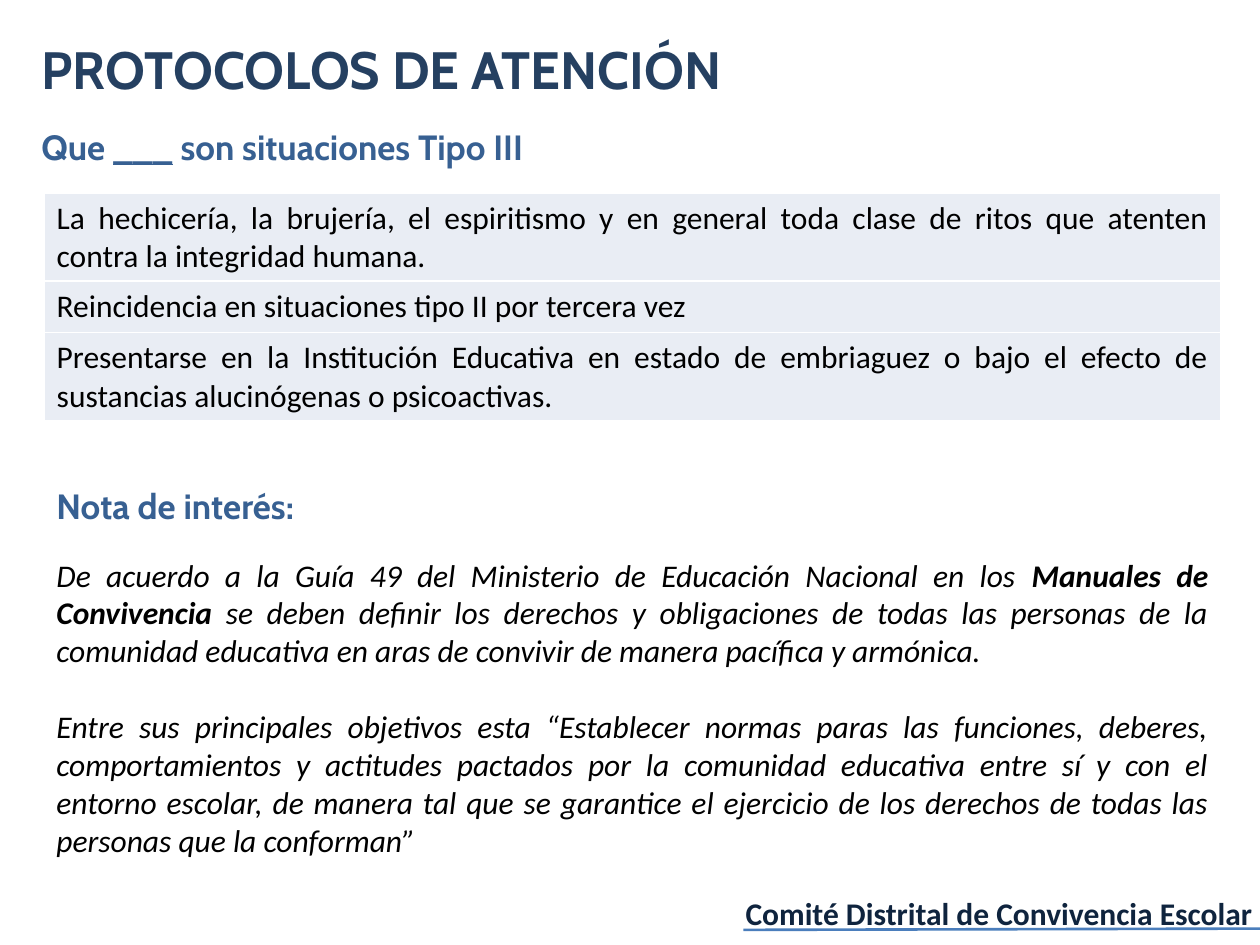
import pptx
import pptx.dml.color
import pptx.enum.shapes
import pptx.enum.text
import pptx.oxml
import pptx.oxml.ns
import pptx.util

Inches = pptx.util.Inches
Pt = pptx.util.Pt
RGBColor = pptx.dml.color.RGBColor
ALIGN = pptx.enum.text.PP_ALIGN

NAVY = RGBColor(0x25, 0x40, 0x61)
BLUE = RGBColor(0x37, 0x60, 0x92)
INK = RGBColor(0x0F, 0x24, 0x3E)
RULE = RGBColor(0x4B, 0x7E, 0xBC)
BAND = RGBColor(0xE9, 0xED, 0xF4)
BLACK = RGBColor(0, 0, 0)

SITUATIONS = [
    ("La hechicería, la brujería, el espiritismo y en general toda clase de ritos "
     "que atenten contra la integridad humana.", 0.69),
    ("Reincidencia en situaciones tipo II por tercera vez", 0.41),
    ("Presentarse en la Institución Educativa en estado de embriaguez o bajo el "
     "efecto de sustancias alucinógenas o psicoactivas.", 0.7),
]
NOTE = [
    [("De acuerdo a la Guía 49 del Ministerio de Educación Nacional en los ", {}),
     ("Manuales de Convivencia ", {"bold": True}),
     ("se deben definir los derechos y obligaciones de todas las personas de la "
      "comunidad educativa en aras de convivir de manera pacífica y armónica.", {})],
    [("Entre sus principales objetivos esta “Establecer normas paras las funciones, "
      "deberes, comportamientos y actitudes pactados por la comunidad educativa entre "
      "sí y con el entorno escolar, de manera tal que se garantice el ejercicio de los "
      "derechos de todas las personas que la conforman”", {})],
]


def write(frame, paragraphs, font="Calibri", size=18, color=BLACK, bold=False,
          italic=False, align=ALIGN.LEFT, gap=0, wrap=True):
    """Fill a text frame with paragraphs, each a string or a list of (text, overrides)."""
    frame.word_wrap = wrap
    for index, runs in enumerate(paragraphs):
        paragraph = frame.paragraphs[0] if index == 0 else frame.add_paragraph()
        paragraph.alignment = align
        if index:
            paragraph.space_before = Pt(gap)
        for text, overrides in [(runs, {})] if isinstance(runs, str) else runs:
            run = paragraph.add_run()
            run.text = text
            run.font.name = font
            run.font.size = Pt(size)
            run.font.color.rgb = color
            run.font.bold = overrides.get("bold", bold)
            run.font.italic = italic
            run.font.underline = overrides.get("underline", False)


def add_title(slide, left, top, width, height):
    """Place the slide heading in the title placeholder."""
    title = slide.shapes.title
    title.left, title.top, title.width, title.height = left, top, width, height
    title.text_frame.auto_size = pptx.enum.text.MSO_AUTO_SIZE.NONE
    title.text_frame.vertical_anchor = pptx.enum.text.MSO_ANCHOR.TOP
    write(title.text_frame, ["PROTOCOLOS DE ATENCIÓN"], font="Cabin", size=30,
          color=NAVY, bold=True)


def add_subheading(slide, runs, left, top, width, height):
    """Place a blue section heading."""
    box = slide.shapes.add_textbox(left, top, width, height)
    write(box.text_frame, [runs], font="Cabin", size=20, color=BLUE, bold=True)


def add_borders(cell):
    """Draw thin white borders round a table cell."""
    properties = cell._tc.get_or_add_tcPr()
    for side in ("lnL", "lnR", "lnT", "lnB"):
        properties.append(pptx.oxml.parse_xml(
            f'<a:{side} {pptx.oxml.ns.nsdecls("a")} w="12700"><a:solidFill>'
            f'<a:srgbClr val="FFFFFF"/></a:solidFill></a:{side}>'))


def add_situations(slide, left, top, width):
    """Place the one-column table of situations."""
    height = Inches(sum(row_height for _, row_height in SITUATIONS))
    table = slide.shapes.add_table(len(SITUATIONS), 1, left, top, width, height).table
    table.first_row = False
    table.horz_banding = False
    for row, (situation, row_height) in zip(table.rows, SITUATIONS):
        row.height = Inches(row_height)
        cell = row.cells[0]
        add_borders(cell)
        cell.fill.solid()
        cell.fill.fore_color.rgb = BAND
        write(cell.text_frame, [situation], align=ALIGN.JUSTIFY)


def add_note(slide, left, top, width, height):
    """Place the note heading and its two paragraphs below it."""
    offset = Inches(0.56)
    add_subheading(slide, "Nota de interés:", left, top, Inches(6.57), Inches(0.44))
    body = slide.shapes.add_textbox(left, top + offset, width, height - offset)
    write(body.text_frame, NOTE, italic=True, align=ALIGN.JUSTIFY, gap=22)


def add_footer(slide, left, top, width, height):
    """Place the committee name and the rule under it."""
    committee = slide.shapes.add_textbox(left, top, width, height)
    write(committee.text_frame, ["Comité Distrital de Convivencia Escolar"],
          color=INK, bold=True, align=ALIGN.RIGHT, wrap=False)
    rule = slide.shapes.add_connector(
        pptx.enum.shapes.MSO_CONNECTOR.STRAIGHT,
        left + Inches(0.11), top + Inches(0.33),
        left + width - Inches(0.04), top + Inches(0.32))
    rule.line.color.rgb = RULE
    rule.line.width = Pt(1.5)
    rule._element.spPr.append(pptx.oxml.parse_xml(
        f'<a:effectLst {pptx.oxml.ns.nsdecls("a")}/>'))


def main():
    """Build the slide and save it."""
    deck = pptx.Presentation()
    deck.slide_width, deck.slide_height = Inches(10), Inches(7.5)
    slide = deck.slides.add_slide(deck.slide_layouts[5])
    heading_left, content_left, content_width = Inches(0.23), Inches(0.35), Inches(9.34)
    add_title(slide, heading_left, Inches(0.24), Inches(8.76), Inches(0.61))
    question = [("Que ", {}), ("___", {"bold": False, "underline": True}),
                (" son situaciones Tipo III", {})]
    add_subheading(slide, question, heading_left, Inches(0.95), Inches(6.57), Inches(0.44))
    add_situations(slide, content_left, Inches(1.53), content_width)
    add_note(slide, content_left, Inches(3.8), content_width, Inches(3.08))
    add_footer(slide, Inches(5.79), Inches(7.05), Inches(4.25), Inches(0.4))
    deck.save("out.pptx")


if __name__ == "__main__":
    main()
